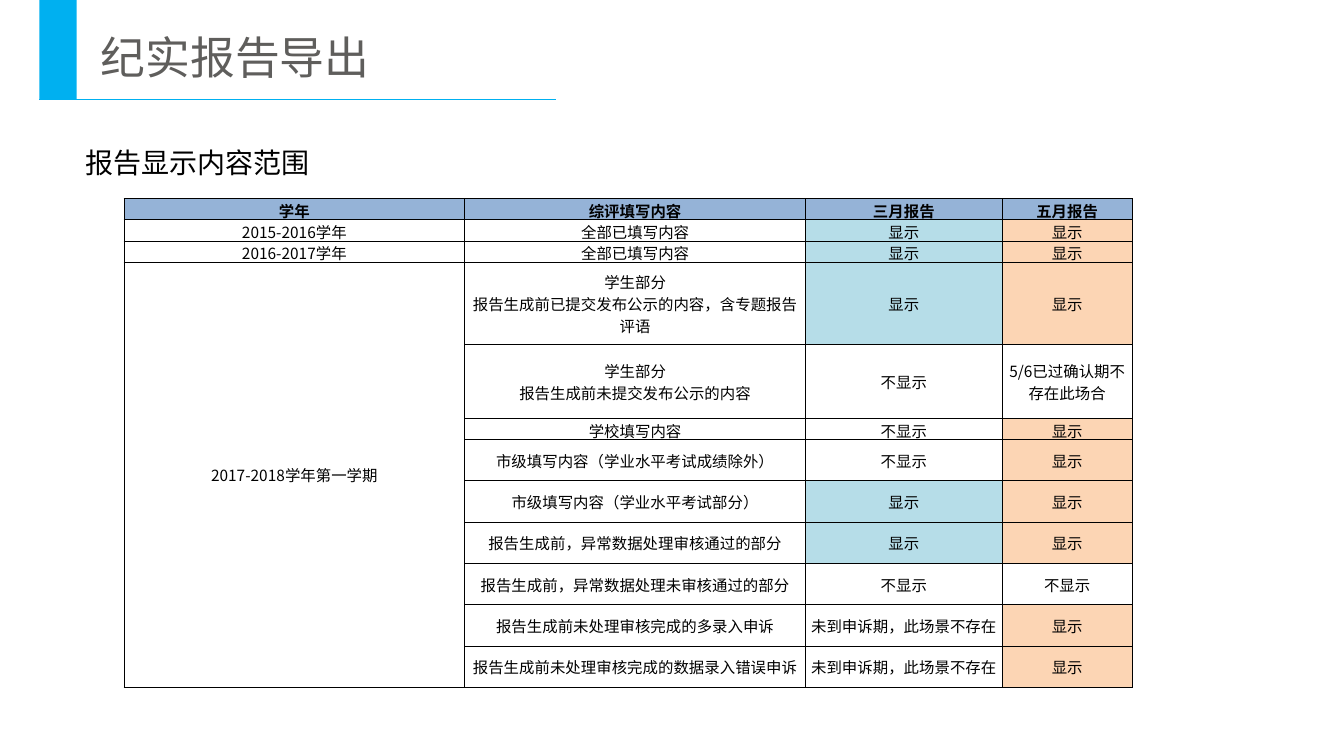
from lxml import etree
from pptx import Presentation
from pptx.dml.color import RGBColor
from pptx.enum.shapes import MSO_CONNECTOR as Link, MSO_SHAPE as Shape
from pptx.enum.text import MSO_ANCHOR as Anchor, PP_ALIGN as Align
from pptx.oxml import parse_xml
from pptx.oxml.ns import qn
from pptx.util import Inches, Pt

FONT = "Noto Sans CJK SC"
NS = "http://schemas.openxmlformats.org/drawingml/2006/main"
HEAD, MARCH, MAY = "95B3D7", "B6DDE8", "FCD5B4"
SHOW, HIDE = "显示", "不显示"
EARLY = "未到申诉期，此场景不存在"
COLS = [3.38, 3.38, 1.95, 1.29]
ROWS = [
    (0.21, "学年", "综评填写内容", "三月报告", "五月报告"),
    (0.21, "2015-2016学年", "全部已填写内容", SHOW, SHOW),
    (0.21, "2016-2017学年", "全部已填写内容", SHOW, SHOW),
    (0.82, "2017-2018学年第一学期",
     "学生部分\n报告生成前已提交发布公示的内容，含专题报告评语", SHOW, SHOW),
    (0.73, "", "学生部分\n报告生成前未提交发布公示的内容", HIDE, "5/6已过确认期不存在此场合"),
    (0.21, "", "学校填写内容", HIDE, SHOW),
    (0.41, "", "市级填写内容（学业水平考试成绩除外）", HIDE, SHOW),
    (0.41, "", "市级填写内容（学业水平考试部分）", SHOW, SHOW),
    (0.41, "", "报告生成前，异常数据处理审核通过的部分", SHOW, SHOW),
    (0.41, "", "报告生成前，异常数据处理未审核通过的部分", HIDE, HIDE),
    (0.41, "", "报告生成前未处理审核完成的多录入申诉", EARLY, SHOW),
    (0.41, "", "报告生成前未处理审核完成的数据录入错误申诉", EARLY, SHOW),
]


def color(code):
    return RGBColor.from_string(code)


def add_run(para, text, size, tint, bold=False):
    run = para.add_run()
    run.text = text
    font = run.font
    font.name, font.size, font.bold = FONT, Pt(size), bold
    font.color.rgb = color(tint)
    etree.SubElement(run._r.get_or_add_rPr(), qn("a:ea"), typeface=FONT)


def add_text(slide, box, text, size, tint):
    frame = slide.shapes.add_textbox(*map(Inches, box)).text_frame
    frame.word_wrap = True
    para = frame.paragraphs[0]
    add_run(para, text, size, tint)
    return frame, para


def add_header(slide, left, top, width, height):
    bar = slide.shapes.add_shape(
        Shape.RECTANGLE, Inches(left), Inches(top), Inches(0.37), Inches(height))
    bar.shadow.inherit = False
    bar.fill.solid()
    bar.fill.fore_color.rgb = color("00B0F0")
    bar.line.fill.background()
    base = Inches(top + height)
    rule = slide.shapes.add_connector(
        Link.STRAIGHT, Inches(left), base, Inches(left + width), base)
    rule.line.color.rgb = color("00B0F0")
    rule.line.width = Pt(0.5)
    etree.SubElement(rule._element.spPr, qn("a:effectLst"))
    frame, _ = add_text(slide, (left + 0.51, top + 0.24, 6.89, 0.64),
                        "纪实报告导出", 32, "5F5E5C")
    frame.vertical_anchor = Anchor.MIDDLE


def add_topic(slide, *box):
    _, para = add_text(slide, box, "报告显示内容范围", 20, "000000")
    para.alignment = Align.JUSTIFY
    para.line_spacing = 1.5
    props = para._p.get_or_add_pPr()
    props.set("marL", str(Inches(0.38)))
    props.set("indent", str(-Inches(0.38)))


def add_edges(cell):
    props = cell._tc.get_or_add_tcPr()
    for side in "LRTB":
        props.append(parse_xml(
            f'<a:ln{side} xmlns:a="{NS}" w="{Pt(0.5)}"><a:solidFill>'
            f'<a:srgbClr val="000000"/></a:solidFill></a:ln{side}>'))


def fill_cell(cell, text, tint, bold):
    cell.margin_left = cell.margin_right = cell.margin_top = Inches(0.01)
    cell.margin_bottom = 0
    cell.vertical_anchor = Anchor.MIDDLE
    add_edges(cell)
    if tint:
        cell.fill.solid()
        cell.fill.fore_color.rgb = color(tint)
    else:
        cell.fill.background()
    para = cell.text_frame.paragraphs[0]
    para.alignment = Align.CENTER
    for n, line in enumerate(text.split("\n") if text else []):
        if n:
            para.add_line_break()
        add_run(para, line, 11, "000000", bold)


def add_grid(slide, *box):
    table = slide.shapes.add_table(
        len(ROWS), len(COLS), *map(Inches, box)).table
    table.first_row = table.horz_banding = False
    for col, width in zip(table.columns, COLS):
        col.width = Inches(width)
    for r, (height, *texts) in enumerate(ROWS):
        table.rows[r].height = Inches(height)
        for c, text in enumerate(texts):
            tint = {2: MARCH, 3: MAY}.get(c) if text == SHOW else None
            fill_cell(table.cell(r, c), text, tint if r else HEAD, r == 0)
    table.cell(3, 0).merge(table.cell(len(ROWS) - 1, 0))


def main():
    deck = Presentation()
    deck.slide_width, deck.slide_height = Inches(13.33), Inches(7.5)
    slide = deck.slides.add_slide(deck.slide_layouts[6])
    add_header(slide, 0.39, 0, 5.12, 0.99)
    add_topic(slide, 0.75, 1.23, 11.63, 1.11)
    add_grid(slide, 1.23, 1.97, 10, 4.88)
    deck.save("out.pptx")


if __name__ == "__main__":
    main()
